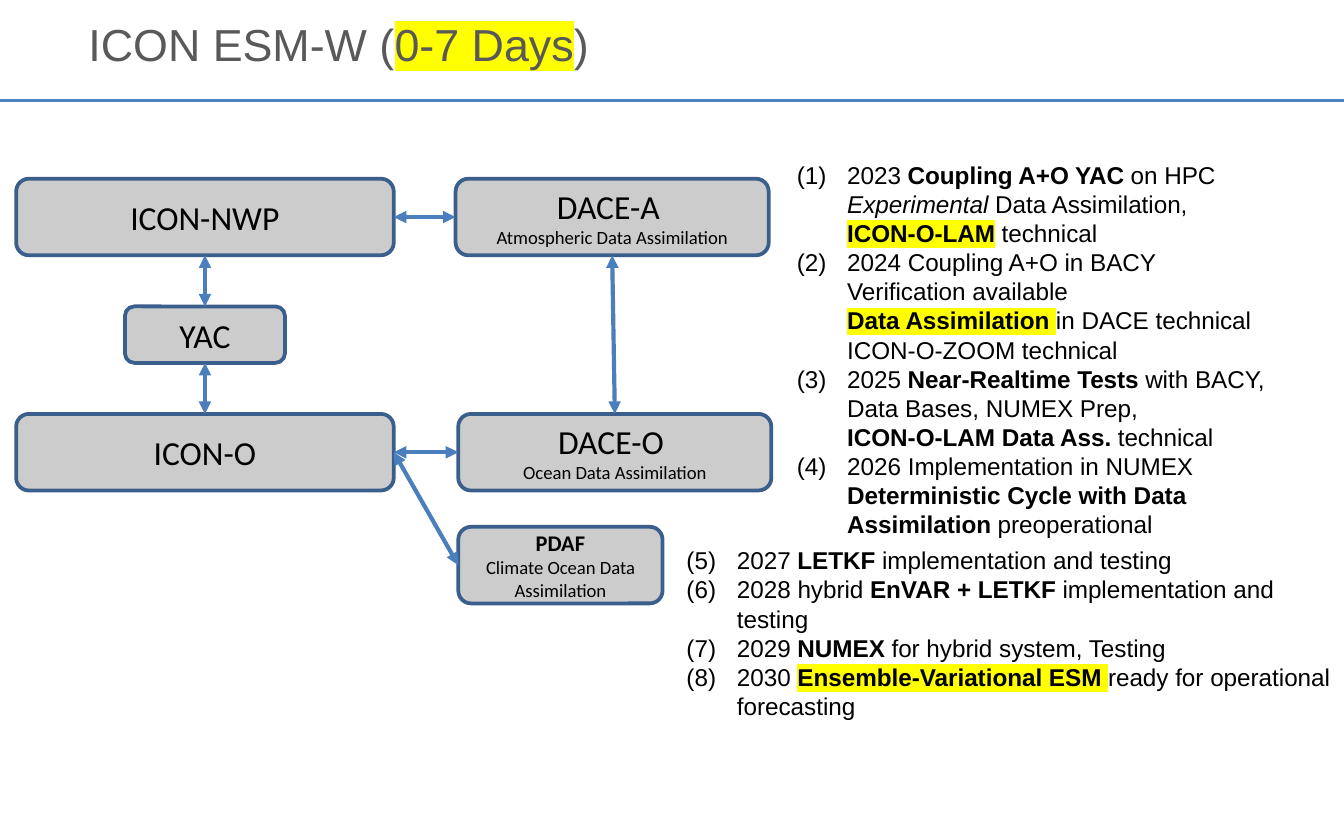
import copy

import pptx
import pptx.dml.color
import pptx.enum.shapes
import pptx.enum.text
import pptx.oxml.ns
import pptx.util
from lxml import etree

COLORS = {"title": "595959", "text": "000000", "mark": "FFFF00", "rule": "4F81BD",
          "node": "CCCCCC", "border": "3A5F8C", "arrow": "4B7EBC"}
COLS, ROWS = 100, 62.5  # grid of the slide, ten cells to the inch
INDENT = 3.75
TOP, LEFT, BOTTOM, RIGHT = range(4)
SHAPE = pptx.enum.shapes.MSO_SHAPE.ROUNDED_RECTANGLE
CENTER = pptx.enum.text.PP_ALIGN.CENTER
MIDDLE = pptx.enum.text.MSO_ANCHOR.MIDDLE
STRAIGHT = pptx.enum.shapes.MSO_CONNECTOR.STRAIGHT


def grid(*cells):
    return [pptx.util.Inches(c / 10) for c in cells]


def rgb(name):
    return pptx.dml.color.RGBColor.from_string(COLORS[name])


def sub(parent, tag, **attrs):
    return etree.SubElement(parent, pptx.oxml.ns.qn(tag), attrs)


def add_run(p, text, size, font="Arial", color="text", style=""):
    """Add text with line breaks; style letters: b bold, i italic, h highlight."""
    for i, line in enumerate(text.split("\n")):
        if i:
            p.add_line_break()
            p._p[-1].append(copy.deepcopy(r._r.rPr))
        if i and not line:
            continue
        r = p.add_run()
        r.text = line
        r.font.size = pptx.util.Pt(size)
        r.font.bold, r.font.italic = "b" in style, "i" in style
        r.font.color.rgb = rgb(color)
        if "h" in style:
            sub(sub(r._r.rPr, "a:highlight"), "a:srgbClr", val=COLORS["mark"])
        r.font.name = font


def add_line(s, start, end, color, width, arrows=False):
    line = s.shapes.add_connector(STRAIGHT, *grid(*start, *end))
    line.line.color.rgb = rgb(color)
    line.line.width = pptx.util.Pt(width)
    if arrows:
        for tag in ("a:headEnd", "a:tailEnd"):
            sub(line.line._get_or_add_ln(), tag, type="triangle")
    sub(line._element.spPr, "a:effectLst")
    return line


def add_header(s, x, y, w, h):
    add_line(s, (x, y + h), (x + w, y + h), "rule", 1.5)
    tf = s.shapes.add_textbox(*grid(x + 5.6, y + 0.7, 78.7, 5.1)).text_frame
    tf.word_wrap = True
    tf.vertical_anchor = MIDDLE
    for text, style in (("ICON ESM-W (", ""), ("0-7 Days", "h"), (")", "")):
        add_run(tf.paragraphs[0], text, size=24, color="title", style=style)


def add_node(s, x, y, w, h, runs):
    sp = s.shapes.add_shape(SHAPE, *grid(x, y, w, h))
    sp.shadow.inherit = False
    sp.fill.solid()
    sp.fill.fore_color.rgb = rgb("node")
    sp.line.color.rgb = rgb("border")
    sp.line.width = pptx.util.Pt(2)
    tf = sp.text_frame
    tf.word_wrap = True
    tf.vertical_anchor = MIDDLE
    p = tf.paragraphs[0]
    p.alignment = CENTER
    for text, size, style in runs:
        add_run(p, text, size, font="Calibri", style=style)
    return sp


def add_diagram(s, x, y):
    """Models on the left, their assimilation systems on the right."""
    model_w, dace_w, yac_w, node_h, yac_h = 28.1, 23.3, 11.9, 5.7, 4.2
    ocean, right = 17.5, 32.9
    yac_x, yac_y = (model_w - yac_w) / 2, (ocean + node_h - yac_h) / 2
    layout = {
        "nwp": (0, 0, model_w, node_h, [("ICON-NWP", 18, "")]),
        "icon_o": (0, ocean, model_w, node_h, [("ICON-O", 18, "")]),
        "yac": (yac_x, yac_y, yac_w, yac_h, [("YAC", 18, "")]),
        "dace_a": (right - 0.2, 0, dace_w, node_h,
                   [("DACE-A \n", 18, ""), ("Atmospheric Data Assimilation", 10, "")]),
        "dace_o": (right, ocean, dace_w, node_h,
                   [("DACE-O \n", 18, ""), ("Ocean Data Assimilation", 10, "")]),
        "pdaf": (right, 25.9, 15.2, node_h,
                 [("PDAF\n", 12, "b"), ("Climate Ocean Data Assimilation", 10, "")]),
    }
    nodes = {name: add_node(s, x + dx, y + dy, w, h, runs)
             for name, (dx, dy, w, h, runs) in layout.items()}
    links = [("nwp", BOTTOM, "yac", TOP), ("yac", BOTTOM, "icon_o", TOP),
             ("dace_a", BOTTOM, "dace_o", TOP), ("nwp", RIGHT, "dace_a", LEFT),
             ("icon_o", RIGHT, "dace_o", LEFT), ("icon_o", RIGHT, "pdaf", LEFT)]
    for a, a_side, b, b_side in links:
        line = add_line(s, (x, y), (x, y), "arrow", 2.25, arrows=True)
        line.begin_connect(nodes[a], a_side)
        line.end_connect(nodes[b], b_side)


def add_milestones(s, x, y, w, h, items, start=1):
    tf = s.shapes.add_textbox(*grid(x, y, w, h)).text_frame
    tf.word_wrap = True
    indent = grid(INDENT)[0]
    for i, runs in enumerate(items):
        p = tf.add_paragraph() if i else tf.paragraphs[0]
        pPr = p._p.get_or_add_pPr()
        pPr.set("marL", str(indent))
        pPr.set("indent", str(-indent))
        sub(pPr, "a:buFont", typeface="+mj-lt")
        sub(pPr, "a:buAutoNum", type="arabicParenBoth", startAt=str(start))
        for text, style in runs:
            add_run(p, text, size=13, style=style)


NEAR_TERM = [
    [("2023 ", ""), ("Coupling A+O YAC ", "b"), ("on HPC\n", ""), ("Experimental", "i"),
     (" Data Assimilation, \n", ""), ("ICON-O-LAM", "bh"), (" technical", "")],
    [("2024 Coupling A+O in BACY\nVerification available \n", ""),
     ("Data Assimilation ", "bh"), ("in DACE technical\nICON-O-ZOOM technical", "")],
    [("2025 ", ""), ("Near-Realtime Tests ", "b"),
     ("with BACY, Data Bases, NUMEX Prep, \n", ""),
     ("ICON-O-LAM Data Ass. ", "b"), ("technical", "")],
    [("2026 Implementation in NUMEX\n", ""),
     ("Deterministic Cycle with Data Assimilation", "b"), (" preoperational", "")],
]
LONG_TERM = [
    [("2027 ", ""), ("LETKF", "b"), (" implementation and testing", "")],
    [("2028 hybrid ", ""), ("EnVAR + LETKF ", "b"), ("implementation and testing", "")],
    [("2029 ", ""), ("NUMEX", "b"), (" for hybrid system, Testing", "")],
    [("2030 ", ""), ("Ensemble-Variational ESM ", "bh"),
     ("ready for operational forecasting", "")],
]


def main():
    prs = pptx.Presentation()
    prs.slide_width, prs.slide_height = grid(COLS, ROWS)
    s = prs.slides.add_slide(prs.slide_layouts[6])
    add_header(s, 0, 0, COLS, 7.5)
    add_diagram(s, 1.2, 13.3)
    add_milestones(s, 58.3, 11.4, 40.9, 31.6, NEAR_TERM)
    add_milestones(s, 50.1, 40.1, 50, 14.1, LONG_TERM, start=5)
    prs.save("out.pptx")


if __name__ == "__main__":
    main()
